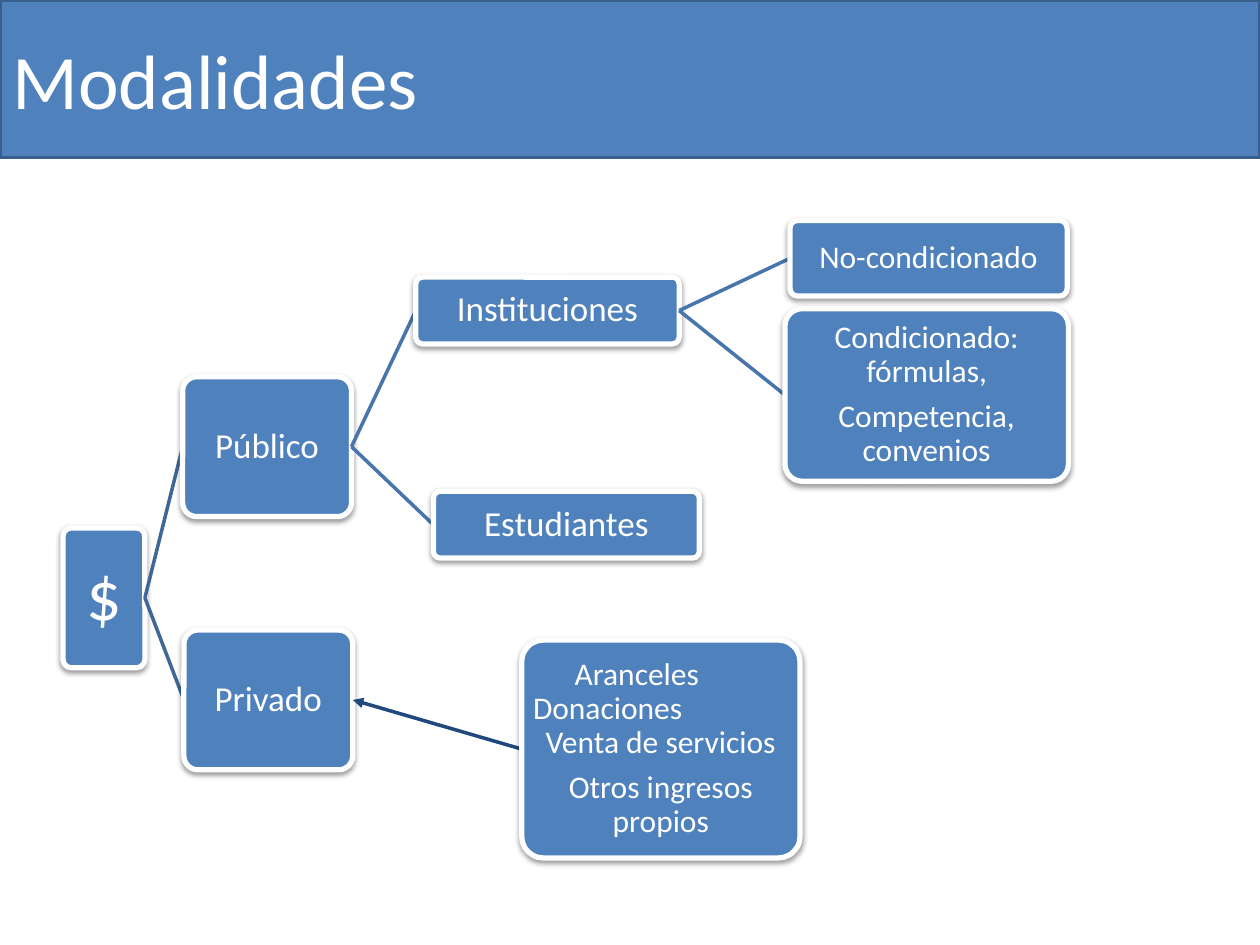
"""Build a slide with a funding tree: public and private sources and their branches."""
from dataclasses import dataclass

from lxml import etree
from pptx import Presentation
from pptx.dml.color import RGBColor
from pptx.enum.shapes import MSO_CONNECTOR, MSO_SHAPE
from pptx.enum.text import MSO_ANCHOR, PP_ALIGN
from pptx.oxml.ns import qn
from pptx.util import Inches, Pt

STRAIGHT = MSO_CONNECTOR.STRAIGHT
RECTANGLE, ROUNDED = MSO_SHAPE.RECTANGLE, MSO_SHAPE.ROUNDED_RECTANGLE
MIDDLE = MSO_ANCHOR.MIDDLE
LEFT, CENTER = PP_ALIGN.LEFT, PP_ALIGN.CENTER

BLUE = RGBColor(0x4F, 0x81, 0xBD)
TITLE_EDGE = RGBColor(0x3A, 0x5F, 0x8C)
ROOT_LINK = RGBColor(0x3F, 0x67, 0x97)
BRANCH_LINK = RGBColor(0x48, 0x75, 0xAC)
ARROW_LINK = RGBColor(0x1F, 0x49, 0x7D)
WHITE = RGBColor(0xFF, 0xFF, 0xFF)

FONT = "Calibri"
WIDTH, HEIGHT = Inches(10), Inches(7.5)
COLUMN, ROW = WIDTH / 100, HEIGHT / 75


@dataclass(frozen=True)
class Line:
    text: str
    indent: float | None = None
    gap: float = 0


@dataclass(frozen=True)
class Node:
    column: float
    row: float
    columns: float
    rows: float
    size: int
    lines: tuple[Line, ...]
    inset: float = 0.1

    @property
    def middle(self) -> float:
        return self.row + self.rows / 2

    @property
    def right(self) -> float:
        return self.column + self.columns


@dataclass(frozen=True)
class Link:
    source: Node
    target: Node
    color: RGBColor
    arrow: bool = False


PARAGRAPH_GAP = 0.35
ROOT = Node(5, 41.9, 6.5, 11.1, 40, (Line("$"),), 0.3)
PUBLIC = Node(14.5, 29.9, 13.4, 11.1, 20, (Line("Público"),))
INSTITUTIONS = Node(33, 22, 20.9, 5.3, 20, (Line("Instituciones"),))
UNCONDITIONAL = Node(62.7, 17.5, 22, 6, 18, (Line("No-condicionado"),))
CONDITIONAL = Node(62.3, 24.5, 22.5, 13.7, 18, (
    Line("Condicionado: fórmulas,", gap=PARAGRAPH_GAP),
    Line("Competencia, convenios"),
))
STUDENTS = Node(34.4, 39, 21.1, 5.3, 20, (Line("Estudiantes"),))
PRIVATE = Node(14.6, 50, 13.4, 11.1, 20, (Line("Privado"),))
OWN_INCOME = Node(41.4, 50.8, 22.1, 17.3, 18, (
    Line("Aranceles", indent=3.6),
    Line("Donaciones", indent=0.3),
    Line("Venta de servicios", indent=1.3, gap=PARAGRAPH_GAP),
    Line("Otros ingresos propios"),
))

LINKS = (
    Link(ROOT, PUBLIC, ROOT_LINK),
    Link(PUBLIC, INSTITUTIONS, BRANCH_LINK),
    Link(INSTITUTIONS, UNCONDITIONAL, BRANCH_LINK),
    Link(INSTITUTIONS, CONDITIONAL, BRANCH_LINK),
    Link(PUBLIC, STUDENTS, BRANCH_LINK),
    Link(ROOT, PRIVATE, ROOT_LINK),
    Link(PRIVATE, OWN_INCOME, ARROW_LINK, arrow=True),
)


def add_panel(page, kind, node: Node, edge: RGBColor, edge_width: float):
    box = page.shapes.add_shape(
        kind, round(node.column * COLUMN), round(node.row * ROW),
        round(node.columns * COLUMN), round(node.rows * ROW))
    box.shadow.inherit = False
    box.fill.solid()
    box.fill.fore_color.rgb = BLUE
    box.line.color.rgb = edge
    box.line.width = Pt(edge_width)
    box.text_frame.word_wrap = True
    box.text_frame.vertical_anchor = MIDDLE
    return box


def add_span(para, text: str, size: int) -> None:
    span = para.add_run()
    span.text = text
    span.font.name = FONT
    span.font.size = Pt(size)
    span.font.color.rgb = WHITE


def add_drop_shadow(box) -> None:
    effects = box._element.spPr.find(qn("a:effectLst"))
    shadow = etree.SubElement(
        effects, qn("a:outerShdw"), blurRad=str(Pt(3.1)), dist=str(Pt(1.6)),
        dir="5400000", rotWithShape="0")
    color = etree.SubElement(shadow, qn("a:srgbClr"), val="000000")
    etree.SubElement(color, qn("a:alpha"), val="38000")


def add_node(page, node: Node) -> None:
    box = add_panel(page, ROUNDED, node, WHITE, 3)
    box.adjustments[0] = 0.1
    add_drop_shadow(box)
    frame = box.text_frame
    inset = round(node.inset * COLUMN)
    frame.margin_left = frame.margin_right = inset
    frame.margin_top = frame.margin_bottom = inset
    for index, line in enumerate(node.lines):
        para = frame.add_paragraph() if index else frame.paragraphs[0]
        para.alignment = CENTER if line.indent is None else LEFT
        para.line_spacing = 0.9
        para.space_after = Pt(node.size * line.gap)
        if line.indent is not None:
            para._p.get_or_add_pPr().set("marL", str(round(line.indent * COLUMN)))
        add_span(para, line.text, node.size)


def add_link(page, link: Link) -> None:
    connector = page.shapes.add_connector(
        STRAIGHT,
        round(link.source.right * COLUMN), round(link.source.middle * ROW),
        round(link.target.column * COLUMN), round(link.target.middle * ROW))
    connector.line.color.rgb = link.color
    connector.line.width = Pt(2)
    if link.arrow:
        etree.SubElement(
            connector.line._get_or_add_ln(), qn("a:headEnd"), type="triangle")
    etree.SubElement(connector._element.spPr, qn("a:effectLst"))


def add_title(page, text: str) -> None:
    banner = add_panel(page, RECTANGLE, Node(0, 0, 100, 12.5, 44, ()), TITLE_EDGE, 2)
    para = banner.text_frame.paragraphs[0]
    para.alignment = LEFT
    add_span(para, text, 44)


def main() -> None:
    deck = Presentation()
    deck.slide_width, deck.slide_height = WIDTH, HEIGHT
    page = deck.slides.add_slide(deck.slide_layouts[6])
    add_title(page, "Modalidades")
    add_node(page, ROOT)
    for link in LINKS:
        add_link(page, link)
        add_node(page, link.target)
    deck.save("out.pptx")


if __name__ == "__main__":
    main()
